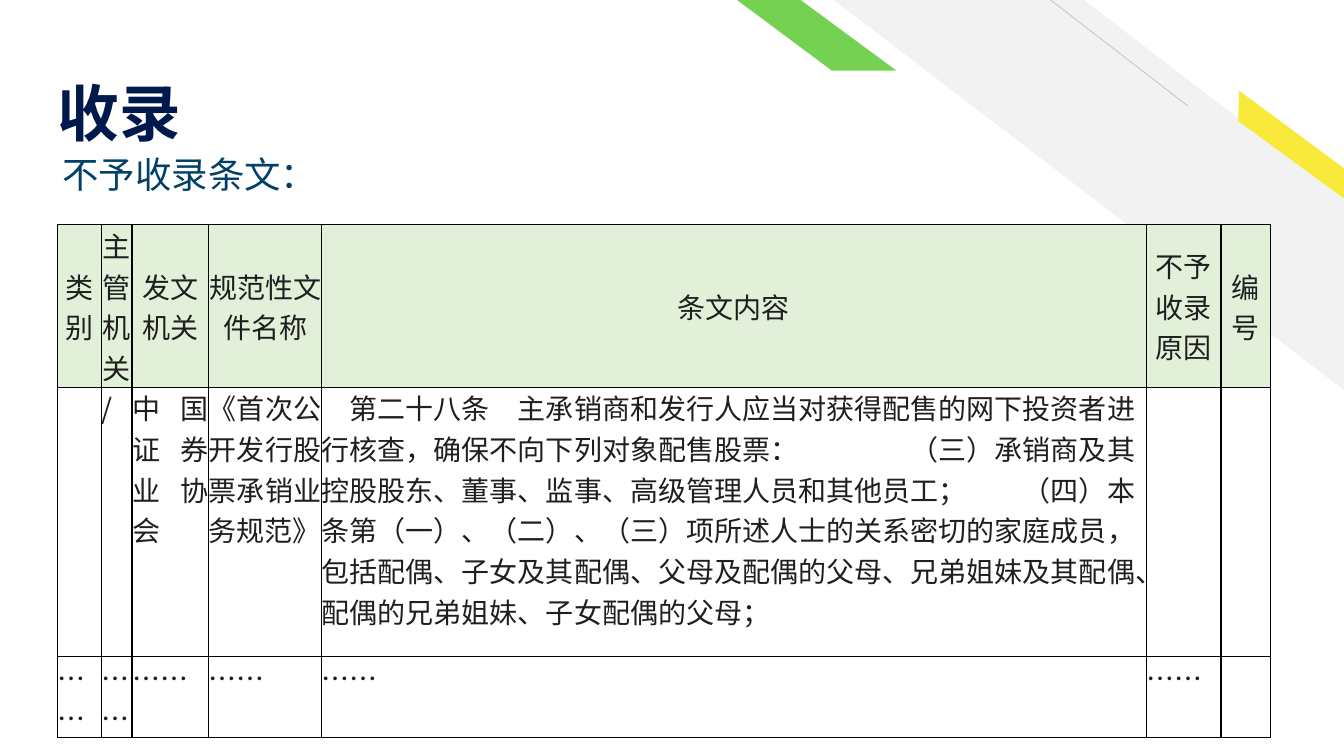
from lxml import etree
from pptx import Presentation
from pptx import util as u
from pptx.dml.color import RGBColor
from pptx.enum import shapes, text
from pptx.oxml import ns

FONT = "Noto Sans CJK SC"
COLUMN_WIDTHS = [0.44, 0.3, 0.76, 1.12, 8.18, 0.74, 0.49]
ROW_HEIGHTS = [1.33, 2.67, 0.67]
HEADINGS = ["类别", "主管机关", "发文机关", "规范性文件名称", "条文内容", "不予收录原因", "编号"]
CLAUSE = (
    "　第二十八条　主承销商和发行人应当对获得配售的网下投资者进行核查，"
    "确保不向下列对象配售股票：　　　　（三）承销商及其控股股东、董事、监事、"
    "高级管理人员和其他员工；　　（四）本条第（一）、（二）、（三）项所述人士的"
    "关系密切的家庭成员，包括配偶、子女及其配偶、父母及配偶的父母、兄弟姐妹及其配偶、"
    "配偶的兄弟姐妹、子女配偶的父母；"
)
ARTICLE = ["", "/", "中国证券业协会", "《首次公开发行股票承销业务规范》", CLAUSE, "", ""]
REMAINDER = ["……"] * 6 + [""]
CLAUSE_COLUMN = HEADINGS.index("条文内容")

GREY_BAND = [(13.33, 1.98), (10.75, 0), (8.27, 0), (13.33, 3.87)]
YELLOW_BAND = [(13.33, 1.67), (13.33, 1.97), (12.28, 1.2), (12.29, 0.9)]
GREEN_BAND = [(7.94, 0), (8.89, 0.7), (8.25, 0.7), (7.31, 0)]


def color(value):
    return RGBColor.from_string(value)


def add_run(paragraph, words, size, ink, bold=False):
    run = paragraph.add_run()
    run.text = words
    run.font.size = u.Pt(size)
    run.font.bold = bold
    run.font.name = FONT
    run.font.color.rgb = color(ink)
    east_asian = etree.SubElement(run.font._element, ns.qn("a:ea"))
    east_asian.set("typeface", FONT)


def set_margins(holder, inset):
    holder.margin_left = holder.margin_right = u.Inches(inset)
    holder.margin_top = holder.margin_bottom = u.Inches(inset)


def add_band(slide, points, fill):
    corners = [(u.Inches(x), u.Inches(y)) for x, y in points]
    builder = slide.shapes.build_freeform(*corners[0], scale=1.0)
    builder.add_line_segments(corners[1:], close=True)
    band = builder.convert_to_shape()
    band.shadow.inherit = False
    band.fill.solid()
    band.fill.fore_color.rgb = color(fill)
    band.line.fill.background()


def add_hairline(slide, start, end, ink):
    ends = [u.Inches(value) for value in (*start, *end)]
    hairline = slide.shapes.add_connector(shapes.MSO_CONNECTOR.STRAIGHT, *ends)
    hairline.line.color.rgb = color(ink)
    hairline.line.width = u.Pt(0.5)
    etree.SubElement(hairline._element.spPr, ns.qn("a:effectLst"))


def fill_heading(slide, words):
    heading = slide.shapes.title
    heading.left, heading.top = u.Inches(0.57), u.Inches(0.23)
    heading.width, heading.height = u.Inches(9.11), u.Inches(1.26)
    frame = heading.text_frame
    frame.auto_size = text.MSO_AUTO_SIZE.NONE
    frame.vertical_anchor = text.MSO_ANCHOR.BOTTOM
    set_margins(frame, 0)
    line = frame.paragraphs[0]
    line.alignment = text.PP_ALIGN.LEFT
    line.line_spacing = 0.9
    add_run(line, words, 44, "00194C", bold=True)


def add_subheading(slide, words):
    subheading = slide.shapes.add_textbox(
        u.Inches(0.57), u.Inches(1.51), u.Inches(8.06), u.Inches(0.67))
    frame = subheading.text_frame
    frame.word_wrap = True
    set_margins(frame, 0.05)
    line = frame.paragraphs[0]
    line.line_spacing = 0.9
    line.space_before = u.Pt(10)
    add_run(line, words, 26, "014067")


def add_borders(cell):
    properties = cell._tc.get_or_add_tcPr()
    for side in ("lnL", "lnR", "lnT", "lnB"):
        border = etree.SubElement(properties, ns.qn(f"a:{side}"), w=str(u.Pt(1)))
        fill = etree.SubElement(border, ns.qn("a:solidFill"))
        etree.SubElement(fill, ns.qn("a:srgbClr"), val="000000")


def format_cell(cell, words, alignment, is_heading):
    add_borders(cell)
    set_margins(cell, 0)
    if is_heading:
        cell.vertical_anchor = text.MSO_ANCHOR.MIDDLE
        cell.fill.solid()
        cell.fill.fore_color.rgb = color("E2EFD9")
    else:
        cell.fill.background()
    if words:
        paragraph = cell.text_frame.paragraphs[0]
        paragraph.alignment = alignment
        add_run(paragraph, words, 20, "1F1F1F")


def add_clause_table(slide, rows):
    table = slide.shapes.add_table(
        len(rows), len(COLUMN_WIDTHS), u.Inches(0.57), u.Inches(2.23),
        u.Inches(sum(COLUMN_WIDTHS)), u.Inches(sum(ROW_HEIGHTS))).table
    table.first_row = table.horz_banding = False
    for column, width in zip(table.columns, COLUMN_WIDTHS):
        column.width = u.Inches(width)
    for row, height in zip(table.rows, ROW_HEIGHTS):
        row.height = u.Inches(height)
    for r, entries in enumerate(rows):
        for c, words in enumerate(entries):
            if r == 0:
                alignment = text.PP_ALIGN.CENTER
            elif r == 1 and c == CLAUSE_COLUMN:
                alignment = text.PP_ALIGN.LEFT
            else:
                alignment = text.PP_ALIGN.JUSTIFY
            format_cell(table.cell(r, c), words, alignment, r == 0)


def main():
    deck = Presentation()
    deck.slide_width, deck.slide_height = u.Inches(13.33), u.Inches(7.5)
    slide = deck.slides.add_slide(deck.slide_layouts.get_by_name("Title Only"))
    add_band(slide, GREY_BAND, "F2F2F2")
    add_hairline(slide, (11.78, 1.05), (10.42, 0), "BFBFBF")
    add_band(slide, YELLOW_BAND, "F8E93B")
    add_band(slide, GREEN_BAND, "75D152")
    add_clause_table(slide, [HEADINGS, ARTICLE, REMAINDER])
    add_subheading(slide, "不予收录条文：")
    fill_heading(slide, "收录")
    deck.save("out.pptx")


if __name__ == "__main__":
    main()
